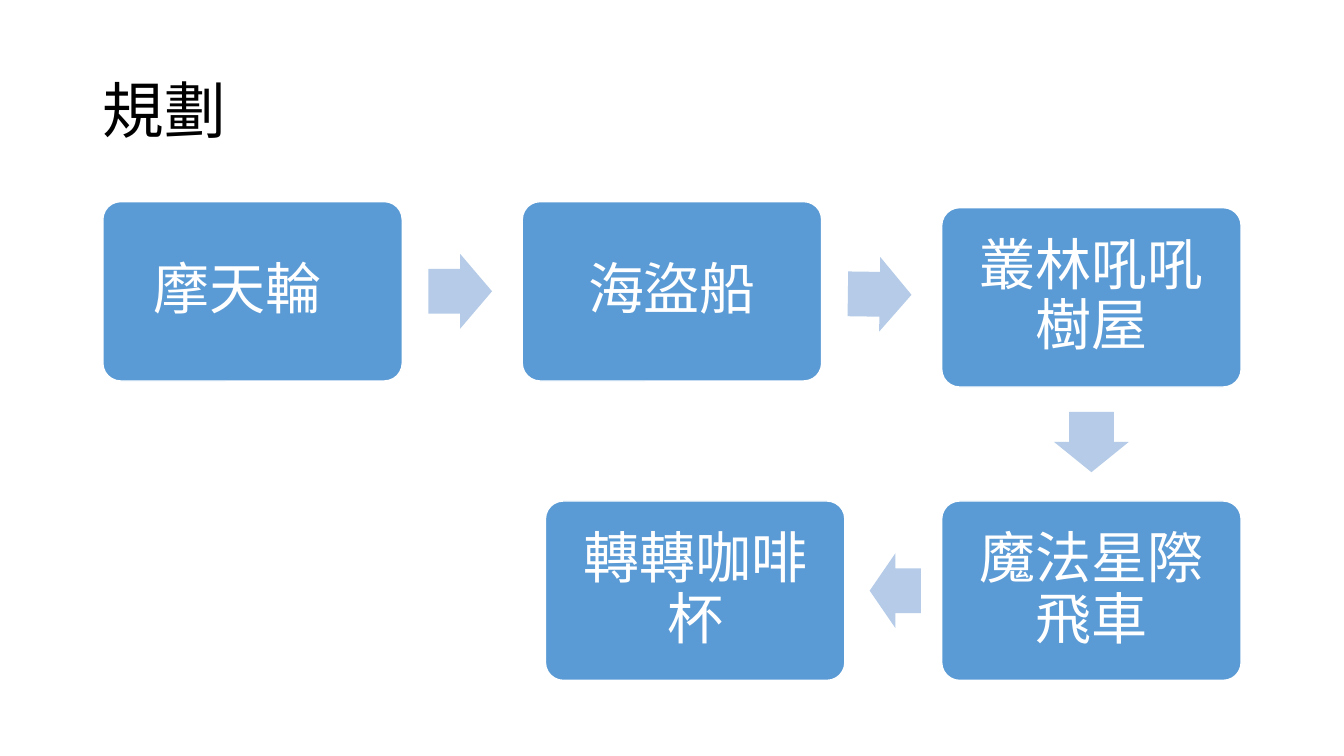
from math import atan2, cos, degrees, hypot, radians, sin

from pptx import Presentation
from pptx.dml.color import RGBColor
from pptx.enum.shapes import MSO_SHAPE
from pptx.enum.text import MSO_ANCHOR, PP_ALIGN
from pptx.util import Inches, Pt

ROUNDED = MSO_SHAPE.ROUNDED_RECTANGLE
ARROW = MSO_SHAPE.RIGHT_ARROW
MIDDLE = MSO_ANCHOR.MIDDLE
LEFT, CENTER = PP_ALIGN.LEFT, PP_ALIGN.CENTER

TITLE = "規劃"
TITLE_BOX = (0.92, 0.4, 11.5, 1.45)
RIDES = [
    {"name": "摩天輪", "left": 1.02, "top": 2.0, "right_inset": 0.47},
    {"name": "海盜船", "left": 5.18, "top": 2.0},
    {"name": "叢林吼吼樹屋", "left": 9.34, "top": 2.06},
    {"name": "魔法星際飛車", "left": 9.34, "top": 4.97},
    {"name": "轉轉咖啡杯", "left": 5.41, "top": 4.97},
]

THEME = {
    "font": "Calibri",
    "title_size": 44,
    "ride_size": 40,
    "title": RGBColor(0x00, 0x00, 0x00),
    "ride_text": RGBColor(0xFF, 0xFF, 0xFF),
    "ride_fill": RGBColor(0x5B, 0x9B, 0xD5),
    "ride_line": RGBColor(0xFF, 0xFF, 0xFF),
    "arrow_fill": RGBColor(0xB5, 0xCB, 0xE7),
}
RIDE_WIDTH, RIDE_HEIGHT = 2.97, 1.78
RIDE_INSET = 0.17
ARROW_HEIGHT = 0.74
ARROW_SHARE = 0.53
ARROW_PULL = 0.02


def set_values(target, values):
    for name, value in values.items():
        setattr(target, name, value)


def write_text(shape, text, size, color, alignment, frame_format):
    frame = shape.text_frame
    set_values(frame, {"word_wrap": True, "vertical_anchor": MIDDLE, **frame_format})
    paragraph = frame.paragraphs[0]
    set_values(paragraph, {"alignment": alignment, "line_spacing": 0.9})
    run = paragraph.add_run()
    run.text = text
    set_values(run.font, {"name": THEME["font"], "size": Pt(size)})
    run.font.color.rgb = color


def add_filled(slide, kind, box, fill, adjustments):
    shape = slide.shapes.add_shape(kind, *map(Inches, box))
    shape.shadow.inherit = False
    shape.fill.solid()
    shape.fill.fore_color.rgb = fill
    for index, value in enumerate(adjustments):
        shape.adjustments[index] = value
    return shape


def add_ride(slide, ride):
    box = (ride["left"], ride["top"], RIDE_WIDTH, RIDE_HEIGHT)
    shape = add_filled(slide, ROUNDED, box, THEME["ride_fill"], [0.1])
    shape.line.color.rgb = THEME["ride_line"]
    shape.line.width = Pt(1)
    insets = {f"margin_{side}": Inches(RIDE_INSET) for side in ("left", "top", "bottom")}
    insets["margin_right"] = Inches(ride.get("right_inset", RIDE_INSET))
    write_text(shape, ride["name"], THEME["ride_size"], THEME["ride_text"], CENTER, insets)


def add_arrow(slide, start, end):
    across = end["left"] - start["left"]
    down = end["top"] - start["top"]
    gap = max(abs(across) - RIDE_WIDTH, abs(down) - RIDE_HEIGHT)
    angle = degrees(atan2(down, across))
    width = gap * ARROW_SHARE
    distance = hypot(across, down) / 2 - ARROW_PULL
    center_x = start["left"] + RIDE_WIDTH / 2 + distance * cos(radians(angle))
    center_y = start["top"] + RIDE_HEIGHT / 2 + distance * sin(radians(angle))
    box = (center_x - width / 2, center_y - ARROW_HEIGHT / 2, width, ARROW_HEIGHT)
    arrow = add_filled(slide, ARROW, box, THEME["arrow_fill"], [0.6, 0.5])
    arrow.line.fill.background()
    arrow.rotation = angle


def main():
    presentation = Presentation()
    presentation.slide_width = Inches(13.33)
    presentation.slide_height = Inches(7.5)
    slide = presentation.slides.add_slide(presentation.slide_layouts[6])
    title = slide.shapes.add_textbox(*map(Inches, TITLE_BOX))
    write_text(title, TITLE, THEME["title_size"], THEME["title"], LEFT, {})
    for ride in RIDES:
        add_ride(slide, ride)
    for start, end in zip(RIDES, RIDES[1:]):
        add_arrow(slide, start, end)
    presentation.save("out.pptx")


if __name__ == "__main__":
    main()
